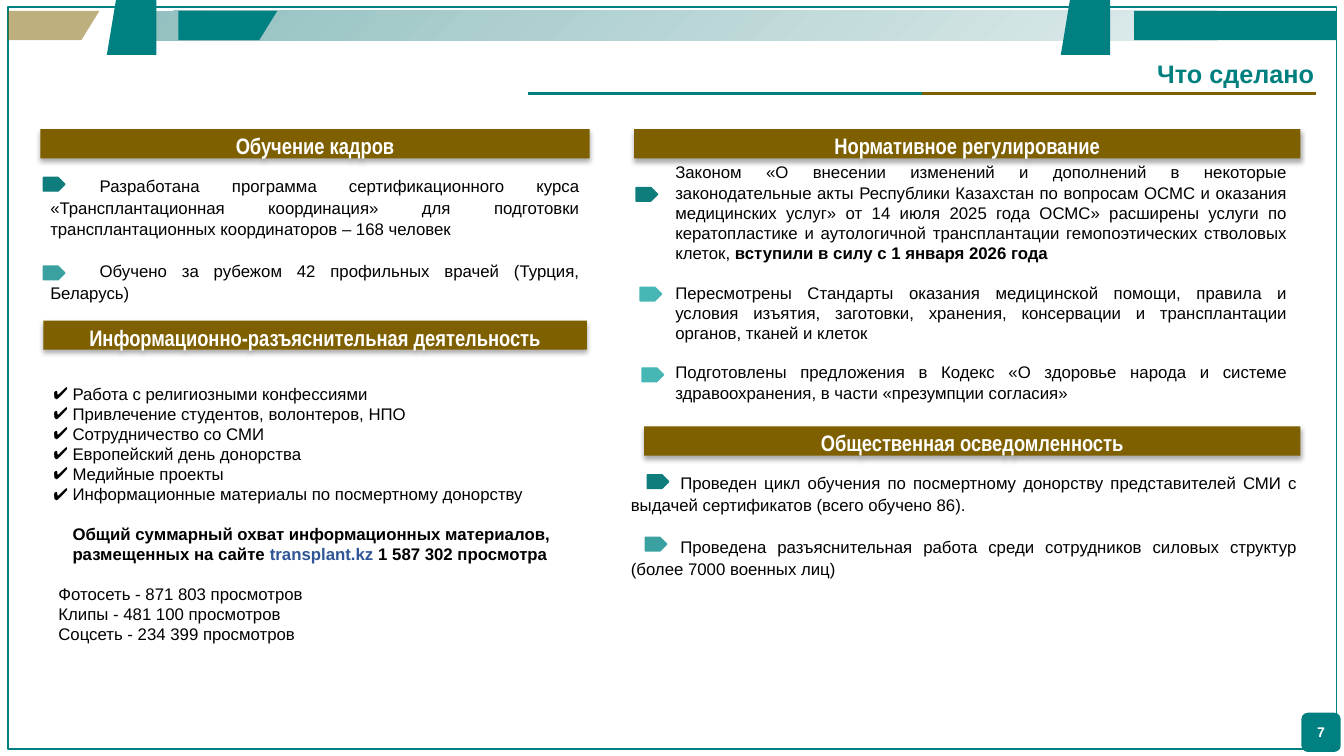
from lxml.etree import SubElement
from pptx import Presentation
from pptx.dml.color import RGBColor
from pptx.enum.shapes import MSO_CONNECTOR as CONN, MSO_SHAPE as SHAPE
from pptx.enum.text import MSO_ANCHOR as ANCHOR, PP_ALIGN as ALIGN
from pptx.oxml.ns import qn
from pptx.util import Inches, Pt

WIDTH, HEIGHT = Inches(13.33), Inches(7.5)
TEAL, GOLD, WHITE, BLACK, LINK = "008080", "7F6000", "FFFFFF", "000000", "2F5597"
DARK, MID, LIGHT = "0F7D7C", "3AA0A0", "47B7B6"
BAR_HEIGHT = 3.87
LINE_GAP = 13.8


def rgb(value):
    return RGBColor.from_string(value)


def col(x):
    return int(WIDTH * x / 100)


def row(y):
    return int(HEIGHT * y / 100)


def place(x, y, w, h):
    return col(x), row(y), col(w), row(h)


def paint(sp, fill=None, line=None):
    sp.shadow.inherit = False
    if fill:
        sp.fill.solid()
        sp.fill.fore_color.rgb = rgb(fill)
    else:
        sp.fill.background()
    if line:
        sp.line.color.rgb = rgb(line)
        sp.line.width = Pt(1)
    else:
        sp.line.fill.background()
    return sp


def add_box(shapes, kind, box, fill=None, line=None):
    return paint(shapes.add_shape(kind, *place(*box)), fill, line)


def add_polygon(shapes, points, fill):
    corners = [(col(x), row(y)) for x, y in points]
    builder = shapes.build_freeform(*corners[0])
    builder.add_line_segments(corners[1:])
    return paint(builder.convert_to_shape(), fill)


def add_run(p, text, size=12, color=BLACK, bold=False, font="Arial"):
    r = p.add_run()
    r.text = text
    r.font.name, r.font.size, r.font.bold = font, Pt(size), bold
    r.font.color.rgb = rgb(color)


def set_label(sp, text, size, color, align, spacing=1.0, font="Arial"):
    tf = sp.text_frame
    tf.word_wrap = True
    p = tf.paragraphs[0]
    p.alignment, p.line_spacing = align, spacing
    add_run(p, text, size, color, True, font)
    return tf


def set_indent(p, left, first, bullet=None):
    pPr = p._p.get_or_add_pPr()
    pPr.set("marL", str(Inches(left)))
    pPr.set("indent", str(Inches(first)))
    if bullet:
        SubElement(SubElement(pPr, qn("a:buClr")), qn("a:srgbClr"), val=BLACK)
        SubElement(pPr, qn("a:buFont"), typeface="Arial")
        SubElement(pPr, qn("a:buChar"), char=bullet)


def add_text(shapes, box, anchor=ANCHOR.TOP):
    tf = shapes.add_textbox(*place(*box)).text_frame
    tf.word_wrap = True
    tf.vertical_anchor = anchor
    return tf


def next_paragraph(tf):
    p = tf.paragraphs[0]
    return tf.add_paragraph() if p.runs else p


def draw_banner(shapes, x, y, w, h):
    top, bottom = y + 0.2 * h, y + 0.2 * h + BAR_HEIGHT
    add_box(shapes, SHAPE.RECTANGLE, (x + 0.6, 0.93, w - 1.15, 98.13), line=TEAL)
    strip = add_box(shapes, SHAPE.RECTANGLE, (x + 10.73, top, 79.8, BAR_HEIGHT), TEAL)
    strip.fill.gradient()
    strip.fill.gradient_angle = 315
    for stop, color in zip(strip.fill.gradient_stops, ("93C0C0", "DFEBEB")):
        stop.color.rgb = rgb(color)
    for left, width, color in ((0.6, 6.8, GOLD), (13.28, 7.35, TEAL)):
        right = x + left + width
        slab = add_polygon(shapes, [(x + left, top), (right, top),
                                    (right - 1.35, bottom), (x + left, bottom)], color)
        if color == GOLD:
            tint = slab._element.spPr.find(".//" + qn("a:srgbClr"))
            SubElement(tint, qn("a:alpha"), val="50000")
    for left in (x + 7.95, x + 78.93):
        add_polygon(shapes, [(left + 0.68, y), (left + 3.68, y),
                             (left + 3.68, y + h), (left, y + h)], TEAL)
    add_box(shapes, SHAPE.RECTANGLE, (x + w - 15.62, top, 15.07, BAR_HEIGHT), TEAL)


def draw_title(shapes, x, y, w, h, text):
    sp = shapes.add_textbox(*place(x + w - 21.6, y, 22.2, h))
    tf = set_label(sp, text, 18, "007F7F", ALIGN.RIGHT, 0.9)
    tf.vertical_anchor = ANCHOR.BOTTOM
    for start, end, color in ((0.5, 1, GOLD), (0, 0.5, TEAL)):
        line = shapes.add_connector(CONN.STRAIGHT, col(x + start * w), row(y + h),
                                    col(x + end * w), row(y + h))
        line.line.color.rgb = rgb(color)
        line.line.width = Pt(2.25)
        SubElement(line._element.spPr, qn("a:effectLst"))


def draw_header(shapes, x, y, w, text):
    sp = add_box(shapes, SHAPE.RECTANGLE, (x, y, w, BAR_HEIGHT), GOLD)
    effects = sp._element.spPr.find(qn("a:effectLst"))
    shadow = SubElement(effects, qn("a:outerShdw"), blurRad=str(Pt(3.5)),
                        dist=str(Pt(2.2)), dir="5400000", rotWithShape="0")
    tint = SubElement(shadow, qn("a:srgbClr"), val=BLACK)
    SubElement(tint, qn("a:alpha"), val="32000")
    tf = set_label(sp, text, 16, WHITE, ALIGN.CENTER, 1.15, "Arial Narrow")
    tf.vertical_anchor = ANCHOR.MIDDLE


def draw_section(shapes, x, y, w, title, body, markers, paragraphs, first=0.49, spacing=1.07):
    draw_header(shapes, x, y, w, title)
    dx, dy, width, height = body
    tf = add_text(shapes, (x + dx, y + dy, width, height))
    for i, runs in enumerate(paragraphs):
        p = next_paragraph(tf)
        set_indent(p, 0, first)
        p.alignment, p.line_spacing = ALIGN.JUSTIFY, spacing
        if i:
            p.space_before = Pt(LINE_GAP * spacing)
        for text, bold in runs:
            add_run(p, text, bold=bold)
    for mx, my, color in markers:
        add_box(shapes, SHAPE.PENTAGON, (x + mx, y + my, 1.6, 1.8), color, color)


def draw_outreach(shapes, x, y, w, title, topics, total, views):
    draw_header(shapes, x, y, w, title)
    tf = add_text(shapes, (x, y + 5.6, w - 0.3, 39.87), ANCHOR.MIDDLE)
    for topic in topics:
        p = next_paragraph(tf)
        set_indent(p, 0.19, -0.19, "✔")
        add_run(p, topic)
    p = next_paragraph(tf)
    set_indent(p, 0.19, 0)
    p.space_before = Pt(LINE_GAP)
    for text, color in total:
        add_run(p, text, color=color, bold=True)
    for i, view in enumerate(views):
        p = next_paragraph(tf)
        set_indent(p, 0.05, 0)
        if i == 0:
            p.space_before = Pt(LINE_GAP)
        add_run(p, view)


def draw_page_number(shapes, x, y, w, h, number):
    sp = add_box(shapes, SHAPE.ROUNDED_RECTANGLE, (x, y, w, h), TEAL)
    set_label(sp, number, 10, WHITE, ALIGN.CENTER).vertical_anchor = ANCHOR.MIDDLE


def main():
    prs = Presentation()
    prs.slide_width, prs.slide_height = WIDTH, HEIGHT
    shapes = prs.slides.add_slide(prs.slide_layouts[6]).shapes
    draw_banner(shapes, 0, 0, 100, 7.27)
    draw_title(shapes, 39.3, 8.53, 58.6, BAR_HEIGHT, "Что сделано")
    draw_section(shapes, 3, 17.07, 40.88, "Обучение кадров", (0, 5.33, 40.88, 18.67),
                 [(0.23, 6.4, DARK), (0.23, 18.13, MID)], [
        [("Разработана программа сертификационного курса «Трансплантационная координация» для подготовки трансплантационных координаторов – 168 человек", False)],
        [("Обучено за рубежом 42 профильных врачей (Турция, Беларусь)", False)]])
    draw_outreach(shapes, 3.23, 42.4, 40.43, "Информационно-разъяснительная деятельность", [
        "Работа с религиозными конфессиями",
        "Привлечение студентов, волонтеров, НПО",
        "Сотрудничество со СМИ",
        "Европейский день донорства",
        "Медийные проекты",
        "Информационные материалы по посмертному донорству"], [
        ("Общий суммарный охват информационных материалов, размещенных на сайте ", BLACK),
        ("transplant.kz ", LINK), ("1 587 302 просмотра", BLACK)], [
        "Фотосеть - 871 803 просмотров",
        "Клипы - 481 100 просмотров",
        "Соцсеть - 234 399 просмотров"])
    draw_section(shapes, 47.18, 17.07, 49.58, "Нормативное регулирование", (2.33, 3.73, 47.03, 33.33),
                 [(0.15, 7.73, DARK), (0.45, 20.93, LIGHT), (0.6, 31.6, LIGHT)], [
        [("Законом «О внесении изменений и дополнений в некоторые законодательные акты Республики Казахстан по вопросам ОСМС и оказания медицинских услуг» от 14 июля 2025 года ОСМС» расширены услуги по кератопластике и аутологичной трансплантации гемопоэтических стволовых клеток, ", False),
         ("вступили в силу с 1 января 2026 года", True)],
        [("Пересмотрены Стандарты оказания медицинской помощи, правила и условия изъятия, заготовки, хранения, консервации и трансплантации органов, тканей и клеток", False)],
        [("Подготовлены предложения в Кодекс «О здоровье народа и системе здравоохранения, в части «презумпции согласия»", False)]], 0, 1.0)
    draw_section(shapes, 47.93, 56.4, 48.83, "Общественная осведомленность", (-1.73, 5.33, 51.08, 18.4),
                 [(0.23, 6.4, DARK), (0.08, 14.67, MID)], [
        [("Проведен цикл обучения по посмертному донорству представителей СМИ с выдачей сертификатов (всего обучено 86).", False)],
        [("Проведена разъяснительная работа среди сотрудников силовых структур (более 7000 военных лиц)", False)]])
    draw_page_number(shapes, 96.83, 94.27, 2.93, 5.2, "7")
    prs.save("out.pptx")


if __name__ == "__main__":
    main()
